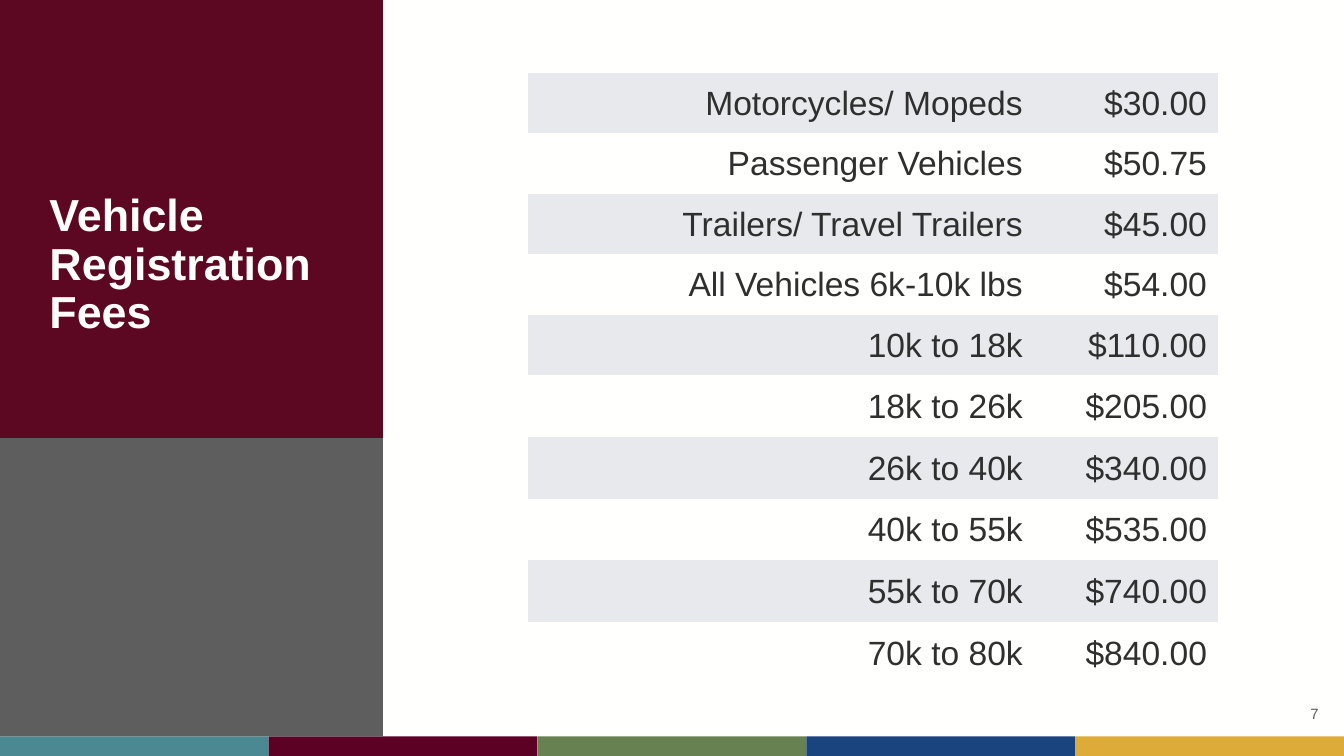
import pptx
import pptx.dml.color
import pptx.enum.shapes
import pptx.enum.text
import pptx.oxml.ns
import pptx.util

Inches = pptx.util.Inches
ALIGN = pptx.enum.text.PP_ALIGN
MIDDLE = pptx.enum.text.MSO_ANCHOR.MIDDLE
NO_GRID_STYLE = "{2D5ABB26-0587-4C30-8999-92F81FD0307C}"

COLORS = {
    "background": "FFFFFE", "maroon": "5C0823", "gray": "5E5E5E",
    "teal": "4B8992", "wine": "5C0024", "green": "678250",
    "blue": "19447E", "gold": "DDAB37", "row": "E8E9EC", "text": "2F2F2F",
}
STRIPES = ["teal", "wine", "green", "blue", "gold"]
FEES = [
    ("Motorcycles/ Mopeds", "$30.00 "),
    ("Passenger Vehicles", "$50.75 "),
    ("Trailers/ Travel Trailers", "$45.00 "),
    ("All Vehicles 6k-10k lbs", "$54.00 "),
    ("10k to 18k", "$110.00 "),
    ("18k to 26k", "$205.00 "),
    ("26k to 40k", "$340.00 "),
    ("40k to 55k", "$535.00 "),
    ("55k to 70k", "$740.00 "),
    ("70k to 80k", "$840.00 "),
]


def rgb(name):
    """Return the named colour."""
    return pptx.dml.color.RGBColor.from_string(COLORS[name])


def set_text(frame, text, size, color, bold=False, align=ALIGN.LEFT, spacing=1.0):
    """Write one formatted paragraph into a text frame."""
    paragraph = frame.paragraphs[0]
    paragraph.alignment = align
    paragraph.line_spacing = spacing
    run = paragraph.add_run()
    run.text = text
    formats = {"name": "Arial", "size": pptx.util.Pt(size), "bold": bold}
    for key, value in formats.items():
        setattr(run.font, key, value)
    run.font.color.rgb = rgb(color)


def add_block(slide, left, top, width, height, color):
    """Add a plain filled rectangle."""
    shape = slide.shapes.add_shape(
        pptx.enum.shapes.MSO_SHAPE.RECTANGLE,
        Inches(left), Inches(top), Inches(width), Inches(height))
    shape.shadow.inherit = False
    shape.fill.solid()
    shape.fill.fore_color.rgb = rgb(color)
    shape.line.fill.background()


def add_label(slide, left, top, width, height, text, **formats):
    """Add a wrapped, vertically centred text box."""
    box = slide.shapes.add_textbox(
        Inches(left), Inches(top), Inches(width), Inches(height))
    box.text_frame.word_wrap = True
    box.text_frame.vertical_anchor = MIDDLE
    set_text(box.text_frame, text, **formats)


def add_stripes(slide, left, top, width, height):
    """Add the row of equal colour stripes."""
    step = width / len(STRIPES)
    for index, color in enumerate(STRIPES):
        add_block(slide, left + index * step, top, step, height, color)


def add_title_panel(slide, left, top, width, height):
    """Add the two-tone side panel with the slide title."""
    split = 3.26
    add_block(slide, left, top, width, split, "maroon")
    add_block(slide, left, top + split, width, height - split, "gray")
    add_label(slide, left + 0.27, top + 0.68, width - 0.45, split - 0.67,
              "Vehicle Registration Fees",
              size=24, color="background", bold=True, spacing=0.9)


def add_fee_table(slide, left, top, width, height):
    """Add the fee table with every other row shaded."""
    frame = slide.shapes.add_table(
        len(FEES), 2, Inches(left), Inches(top), Inches(width), Inches(height))
    table = frame.table
    table.first_row = False
    table.horz_banding = False
    style = next(frame.element.iter(pptx.oxml.ns.qn("a:tableStyleId")))
    style.text = NO_GRID_STYLE
    fee_width = 1.44
    for column, size in zip(table.columns, (width - fee_width, fee_width)):
        column.width = Inches(size)
    formats = {
        "vertical_anchor": MIDDLE,
        "margin_left": Inches(0.01),
        "margin_top": Inches(0.01),
        "margin_right": Inches(0.01),
        "margin_bottom": 0,
    }
    for row_index, values in enumerate(FEES):
        table.rows[row_index].height = Inches(0.45 if row_index < 5 else 0.46)
        for column_index, value in enumerate(values):
            cell = table.cell(row_index, column_index)
            for key, setting in formats.items():
                setattr(cell, key, setting)
            if row_index % 2:
                cell.fill.background()
            else:
                cell.fill.solid()
                cell.fill.fore_color.rgb = rgb("row")
            set_text(cell.text_frame, value, 18, "text", align=ALIGN.RIGHT)


def main():
    """Build and save the slide."""
    presentation = pptx.Presentation()
    presentation.slide_width = Inches(10)
    presentation.slide_height = Inches(10 * 9 / 16)
    slide = presentation.slides.add_slide(presentation.slide_layouts[6])
    slide.background.fill.solid()
    slide.background.fill.fore_color.rgb = rgb("background")
    add_stripes(slide, 0, 5.48, 10, 0.15)
    add_title_panel(slide, 0, 0, 2.85, 5.48)
    add_label(slide, 7.66, 5.16, 2.25, 0.3, "7",
              size=8, color="gray", align=ALIGN.RIGHT)
    add_fee_table(slide, 3.93, 0.54, 5.13, 4.55)
    presentation.save("out.pptx")


if __name__ == "__main__":
    main()
